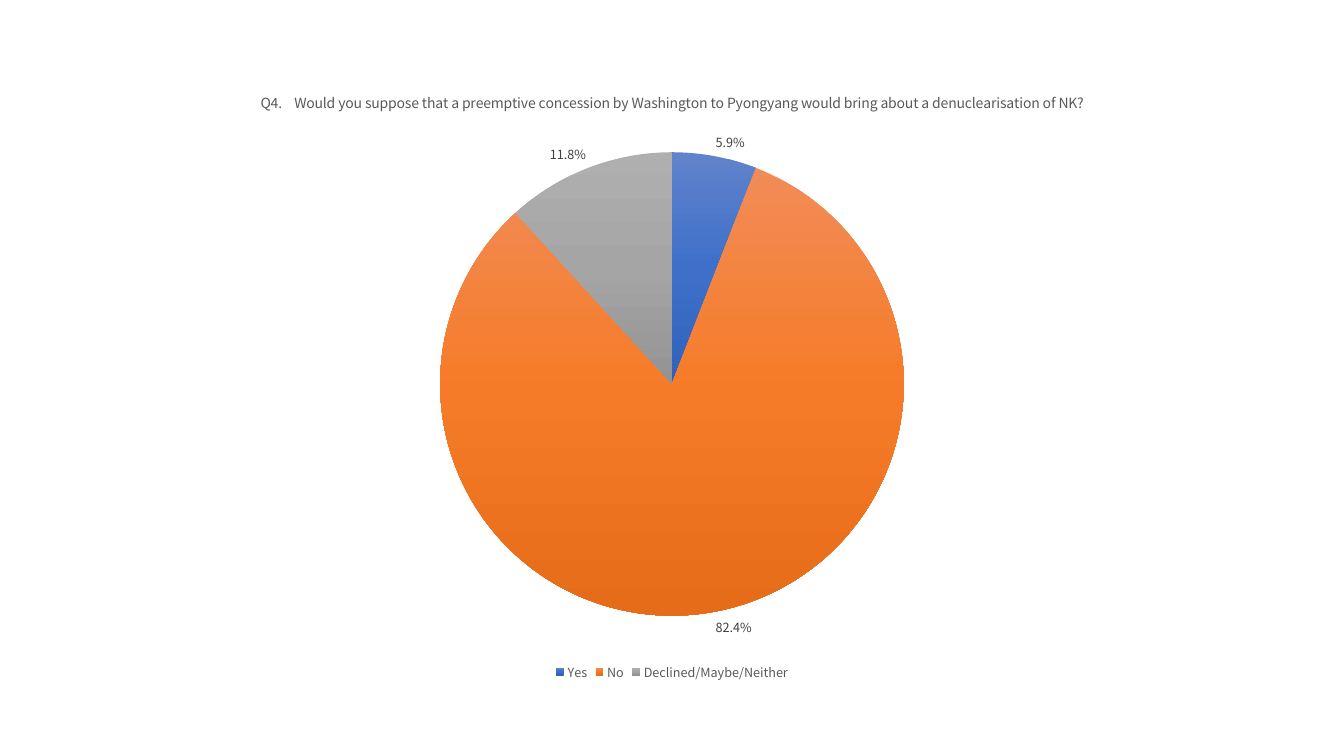
from copy import deepcopy
from dataclasses import dataclass

from pptx import Presentation
from pptx.chart.data import CategoryChartData
from pptx.chart.series import PieSeries
from pptx.dml.color import RGBColor
from pptx.enum.chart import XL_CHART_TYPE, XL_LABEL_POSITION, XL_LEGEND_POSITION
from pptx.text.text import Font
from pptx.util import Inches, Pt

FACE = "Noto Sans CJK KR"
BLACK = RGBColor(0x00, 0x00, 0x00)
GREY = RGBColor(0x59, 0x59, 0x59)
DARK = RGBColor(0x40, 0x40, 0x40)
TITLE = (
    "Q4.    Would you suppose that a preemptive concession by Washington "
    "to Pyongyang would bring about a denuclearisation of NK?"
)


@dataclass
class Answer:
    name: str
    share: float
    shades: tuple[RGBColor, RGBColor, RGBColor]


ANSWERS = [
    Answer("Yes", 0.059, (
        RGBColor(0x61, 0x83, 0xCB), RGBColor(0x3E, 0x70, 0xCA), RGBColor(0x30, 0x62, 0xBB))),
    Answer("No", 0.824, (
        RGBColor(0xF1, 0x8C, 0x57), RGBColor(0xF6, 0x7B, 0x28), RGBColor(0xE5, 0x6C, 0x19))),
    Answer("Declined/Maybe/Neither", 0.118, (
        RGBColor(0xAF, 0xAF, 0xAF), RGBColor(0xA5, 0xA5, 0xA5), RGBColor(0x93, 0x93, 0x93))),
]


def style(font: Font, size: int, color: RGBColor) -> None:
    font.name = FACE
    font.size = Pt(size)
    font.bold = False
    font.color.rgb = color


def shade(series: PieSeries, index: int, answer: Answer) -> None:
    fill = series.points[index].format.fill
    fill.gradient()
    fill.gradient_angle = 270
    stops = series._element.xpath("c:dPt/c:spPr/a:gradFill/a:gsLst")[index]
    stops.insert(1, deepcopy(stops[0]))
    for step, (stop, color) in enumerate(zip(fill.gradient_stops, answer.shades)):
        stop.position = step / 2
        stop.color.rgb = color


def main() -> None:
    deck = Presentation()
    deck.slide_width, deck.slide_height = Inches(13.33), Inches(7.5)
    slide = deck.slides.add_slide(deck.slide_layouts[6])

    data = CategoryChartData(number_format="0.0%")
    data.categories = [answer.name for answer in ANSWERS]
    data.add_series(TITLE, [answer.share for answer in ANSWERS])
    frame = slide.shapes.add_chart(
        XL_CHART_TYPE.PIE, Inches(0.7), Inches(0.7), Inches(11.93), Inches(6.09), data)
    chart = frame.chart
    style(chart.font, 10, BLACK)

    chart.has_title = True
    text = chart.chart_title.text_frame
    text.text = TITLE
    style(text.paragraphs[0].runs[0].font, 10, GREY)

    chart.has_legend = True
    chart.legend.position = XL_LEGEND_POSITION.BOTTOM
    chart.legend.include_in_layout = False
    style(chart.legend.font, 9, GREY)

    plot = chart.plots[0]
    plot.vary_by_categories = True
    series = plot.series[0]
    for index, answer in enumerate(ANSWERS):
        shade(series, index, answer)

    labels = series.data_labels
    labels.show_value = True
    labels.show_percentage = False
    labels.number_format = "0.0%"
    labels.number_format_is_linked = False
    labels.position = XL_LABEL_POSITION.OUTSIDE_END
    style(labels.font, 9, DARK)

    deck.save("out.pptx")


if __name__ == "__main__":
    main()
